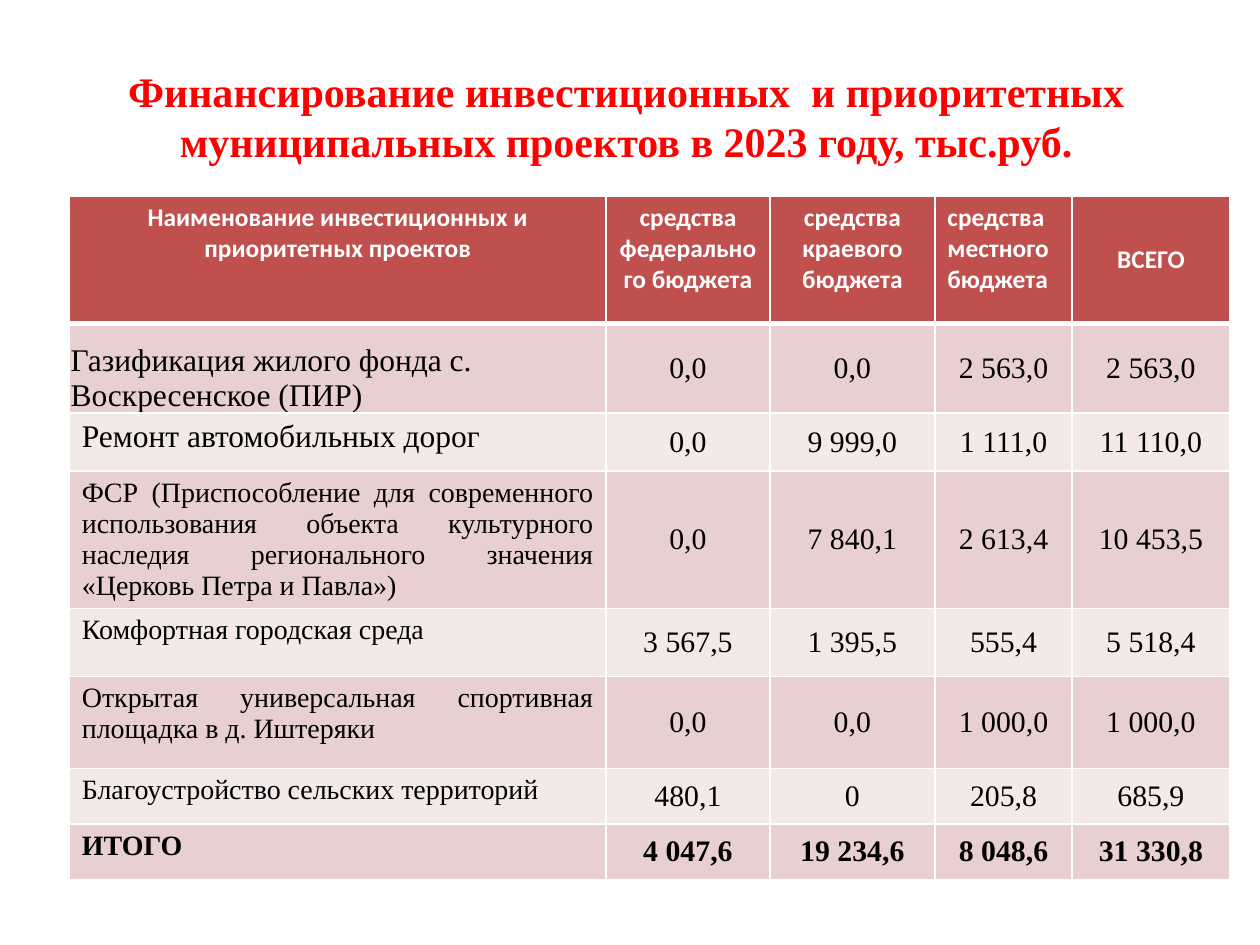
"""Build a slide with a table of project financing by budget source."""
from lxml import etree
from pptx import Presentation
from pptx.dml.color import RGBColor
from pptx.enum.text import MSO_ANCHOR, PP_ALIGN
from pptx.oxml.ns import qn
from pptx.util import Inches, Pt

LEFT, CENTER, JUSTIFY = PP_ALIGN.LEFT, PP_ALIGN.CENTER, PP_ALIGN.JUSTIFY
TOP, MIDDLE, BOTTOM = MSO_ANCHOR.TOP, MSO_ANCHOR.MIDDLE, MSO_ANCHOR.BOTTOM
RED = RGBColor(0xFF, 0x00, 0x00)
WHITE = RGBColor(0xFF, 0xFF, 0xFF)
BLACK = RGBColor(0x00, 0x00, 0x00)
HEADER_FILL = RGBColor(0xC0, 0x50, 0x4D)
BAND_FILLS = (RGBColor(0xE8, 0xD0, 0xD0), RGBColor(0xF4, 0xE9, 0xE9))
SERIF, SANS = "Times New Roman", "Calibri"

TITLE = "Финансирование инвестиционных  и приоритетных муниципальных проектов в 2023 году, тыс.руб."
HEADERS = [
    ("Наименование инвестиционных и приоритетных проектов", CENTER, TOP),
    ("средства федерального бюджета", CENTER, TOP),
    ("средства краевого бюджета", CENTER, TOP),
    ("средства местного бюджета", LEFT, TOP),
    ("ВСЕГО", CENTER, MIDDLE),
]
PROJECTS = [
    ("Газификация жилого фонда с. Воскресенское (ПИР)", 18, ("0,0", "0,0", "2 563,0", "2 563,0")),
    ("Ремонт автомобильных дорог", 18, ("0,0", "9 999,0", "1 111,0", "11 110,0")),
    ("ФСР (Приспособление для современного использования объекта культурного наследия "
     "регионального значения «Церковь Петра и Павла»)", 16, ("0,0", "7 840,1", "2 613,4", "10 453,5")),
    ("Комфортная городская среда", 16, ("3 567,5", "1 395,5", "555,4", "5 518,4")),
    ("Открытая универсальная спортивная площадка в д. Иштеряки", 16,
     ("0,0", "0,0", "1 000,0", "1 000,0")),
    ("Благоустройство сельских территорий", 16, ("480,1", "0", "205,8", "685,9")),
    ("ИТОГО", 16, ("4 047,6", "19 234,6", "8 048,6", "31 330,8")),
]
COLUMN_WIDTHS = (4.26, 1.3, 1.31, 1.09, 1.25)
ROW_HEIGHTS = (1.01, 0.71, 0.46, 1.09, 0.54, 0.73, 0.44, 0.44)


def write(frame, text, size, font, color, bold, align):
    paragraph = frame.paragraphs[0]
    paragraph.text = text
    paragraph.alignment = align
    paragraph.font.size = Pt(size)
    paragraph.font.name = font
    paragraph.font.color.rgb = color
    paragraph.font.bold = bold


def set_borders(cell, top, bottom):
    properties = cell._tc.get_or_add_tcPr()
    widths = {"a:lnL": 1, "a:lnR": 1, "a:lnT": top, "a:lnB": bottom}
    for position, (tag, width) in enumerate(widths.items()):
        line = etree.Element(qn(tag), w=str(Pt(width)))
        fill = etree.SubElement(line, qn("a:solidFill"))
        etree.SubElement(fill, qn("a:srgbClr"), val=str(WHITE))
        properties.insert(position, line)


def style_cell(cell, fill, anchor, top=1, bottom=1):
    cell.fill.solid()
    cell.fill.fore_color.rgb = fill
    cell.vertical_anchor = anchor
    set_borders(cell, top, bottom)


def add_title(slide):
    box = slide.shapes.add_textbox(Inches(0.47), Inches(0.23), Inches(9), Inches(1.09))
    frame = box.text_frame
    frame.word_wrap = True
    frame.vertical_anchor = BOTTOM
    frame.margin_left = frame.margin_right = frame.margin_bottom = 0
    write(frame, TITLE, 24, SERIF, RED, True, CENTER)


def add_financing(slide):
    table = slide.shapes.add_table(
        len(ROW_HEIGHTS), len(COLUMN_WIDTHS), Inches(0.55), Inches(1.56),
        Inches(sum(COLUMN_WIDTHS)), Inches(sum(ROW_HEIGHTS))).table
    for column, width in zip(table.columns, COLUMN_WIDTHS):
        column.width = Inches(width)
    for row, height in zip(table.rows, ROW_HEIGHTS):
        row.height = Inches(height)

    for column, (heading, align, anchor) in enumerate(HEADERS):
        cell = table.cell(0, column)
        write(cell.text_frame, heading, 14.5, SANS, WHITE, True, align)
        style_cell(cell, HEADER_FILL, anchor, bottom=3)

    for row, (project, size, amounts) in enumerate(PROJECTS, 1):
        first, total = row == 1, row == len(PROJECTS)
        fill = BAND_FILLS[(row - 1) % 2]
        top = 3 if first else 1
        name = table.cell(row, 0)
        write(name.text_frame, project, size, SERIF, BLACK, total, LEFT if first else JUSTIFY)
        style_cell(name, fill, BOTTOM if first else TOP, top)
        if first:
            name.margin_left = name.margin_right = name.margin_top = Inches(0.01)
            name.margin_bottom = 0
        for column, amount in enumerate(amounts, 1):
            cell = table.cell(row, column)
            write(cell.text_frame, amount, 17, SERIF, BLACK, total, CENTER)
            style_cell(cell, fill, MIDDLE, top)


def main():
    presentation = Presentation()
    presentation.slide_width, presentation.slide_height = Inches(10), Inches(7.5)
    slide = presentation.slides.add_slide(presentation.slide_layouts[6])
    add_financing(slide)
    add_title(slide)
    presentation.save("out.pptx")


if __name__ == "__main__":
    main()
